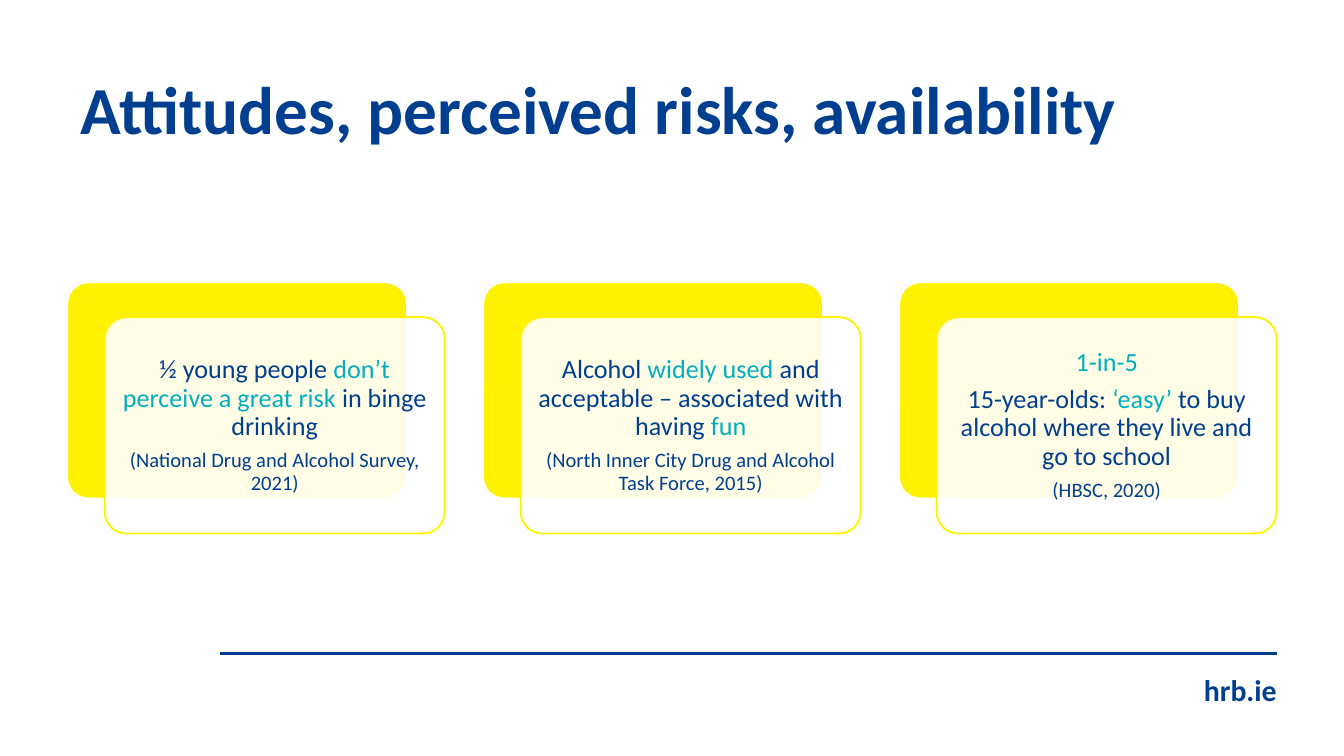
"""Build a slide with three layered cards on attitudes to alcohol."""
from dataclasses import dataclass

from lxml import etree
from pptx import Presentation
from pptx.dml.color import RGBColor
from pptx.enum.shapes import MSO_CONNECTOR, MSO_SHAPE
from pptx.enum.text import MSO_ANCHOR, MSO_AUTO_SIZE, PP_ALIGN
from pptx.oxml.ns import qn
from pptx.util import Pt

LINE = MSO_CONNECTOR.STRAIGHT
ROUND = MSO_SHAPE.ROUNDED_RECTANGLE
MIDDLE, TOP = MSO_ANCHOR.MIDDLE, MSO_ANCHOR.TOP
LEFT, CENTER = PP_ALIGN.LEFT, PP_ALIGN.CENTER
FIXED = MSO_AUTO_SIZE.NONE
SCALE = 4572


@dataclass(frozen=True)
class Theme:
    """Colours, font and type sizes."""

    navy: str = "003E90"
    teal: str = "00AEC0"
    yellow: str = "FFF200"
    white: str = "FFFFFF"
    font: str = "Calibri"
    head: int = 36
    site: int = 16
    body: int = 14
    cite: int = 11


def px(*nums):
    """Turn px into EMU."""
    return [num * SCALE for num in nums]


def apply(obj, **values):
    """Set each named value on an object."""
    for name, value in values.items():
        setattr(obj, name, value)


class Deck:
    """Hold the theme and the current slide."""

    def __init__(self, theme, width, height):
        """Start a deck with one title-only slide."""
        self.theme = theme
        self.file = Presentation()
        wide, high = px(width, height)
        apply(self.file, slide_width=wide, slide_height=high)
        self.slide = self.file.slides.add_slide(self.file.slide_layouts[5])

    def fill_text(self, para, runs, size, bold=False, **style):
        """Fill a paragraph with (text, colour) runs."""
        apply(para, **style)
        for text, color in runs:
            run = para.add_run()
            run.text = text
            apply(run.font, name=self.theme.font, size=Pt(size), bold=bold)
            run.font.color.rgb = RGBColor.from_string(color)

    def title(self, text, box):
        """Place and format the slide title."""
        shape = self.slide.shapes.title
        left, top, width, height = px(*box)
        apply(shape, left=left, top=top, width=width, height=height)
        frame = shape.text_frame
        apply(frame, vertical_anchor=MIDDLE, auto_size=FIXED, word_wrap=True)
        self.fill_text(frame.paragraphs[0], [(text, self.theme.navy)],
                       self.theme.head, True, alignment=LEFT,
                       line_spacing=0.9)

    def label(self, text, box):
        """Add a bold one-line label."""
        frame = self.slide.shapes.add_textbox(*px(*box)).text_frame
        apply(frame, vertical_anchor=TOP, word_wrap=True)
        self.fill_text(frame.paragraphs[0], [(text, self.theme.navy)],
                       self.theme.site, True)

    def rule(self, start, end):
        """Draw a straight line between two points."""
        line = self.slide.shapes.add_connector(LINE, *px(*start, *end))
        line.line.color.rgb = RGBColor.from_string(self.theme.navy)
        line.line.width = Pt(1.75)
        etree.SubElement(line._element.spPr, qn("a:effectLst"))

    def panel(self, box, fill, edge, alpha=100):
        """Add a rounded panel."""
        shape = self.slide.shapes.add_shape(ROUND, *px(*box))
        shape.adjustments[0] = 0.1
        shape.shadow.inherit = False
        shape.fill.solid()
        shape.fill.fore_color.rgb = RGBColor.from_string(fill)
        shape.line.color.rgb = RGBColor.from_string(edge)
        shape.line.width = Pt(1)
        if alpha < 100:
            color = shape._element.spPr.find(qn("a:solidFill"))[0]
            etree.SubElement(color, qn("a:alpha"), val=str(alpha * 1000))
        return shape

    def card(self, left, top, paras):
        """Add a yellow panel with a text panel over it."""
        look = self.theme
        width, height = 506, 322
        self.panel((left, top, width, height), look.yellow, look.white)
        front = self.panel((left + 56, top + 52, width, height),
                           look.white, look.yellow, 90)
        frame = front.text_frame
        apply(frame, vertical_anchor=MIDDLE, word_wrap=True)
        sides = ("left", "top", "right", "bottom")
        apply(frame, **{f"margin_{side}": px(12)[0] for side in sides})
        for num, (size, runs) in enumerate(paras):
            para = frame.add_paragraph() if num else frame.paragraphs[0]
            self.fill_text(para, runs, size, alignment=CENTER,
                           line_spacing=0.9, space_after=Pt(size * 0.35))


def main():
    """Build and save the slide."""
    look = Theme()
    navy, teal, body, cite = look.navy, look.teal, look.body, look.cite
    deck = Deck(look, 2000, 1125)
    deck.label("hrb.ie", (1772, 990, 178, 74))
    deck.rule((328, 972), (1900, 972))
    deck.title("Attitudes, perceived risks, availability",
               (100, 100, 1800, 136))
    cards = [
        [(body, [("½ young people ", navy),
                 ("don’t perceive a great risk", teal),
                 (" in binge drinking", navy)]),
         (cite, [("(National Drug and Alcohol Survey, 2021)", navy)])],
        [(body, [("Alcohol ", navy), ("widely used ", teal),
                 ("and acceptable – associated with having ", navy),
                 ("fun", teal)]),
         (cite, [("(North Inner City Drug and Alcohol Task Force, 2015)",
                  navy)])],
        [(body, [("1-in-5", teal)]),
         (body, [("15-year-olds: ", navy), ("‘easy’ ", teal),
                 ("to buy alcohol where they live and go to school", navy)]),
         (cite, [("(HBSC, 2020)", navy)])],
    ]
    for num, paras in enumerate(cards):
        deck.card(100 + 619 * num, 420, paras)
    deck.file.save("out.pptx")


if __name__ == "__main__":
    main()
